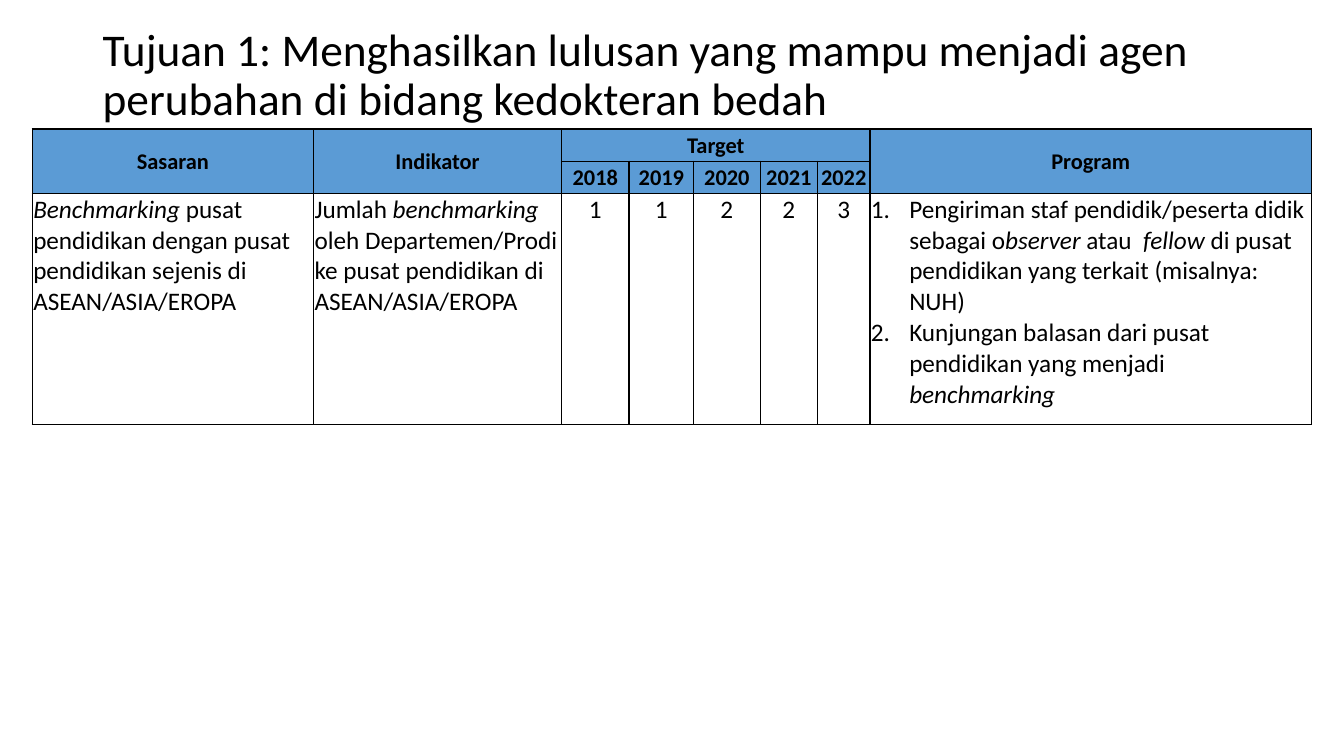
from dataclasses import dataclass

from lxml.etree import SubElement
from pptx import Presentation
from pptx.dml.color import RGBColor
from pptx.enum.text import MSO_ANCHOR, PP_ALIGN
from pptx.oxml.ns import qn
from pptx.util import Inches, Pt


@dataclass(frozen=True)
class Theme:
    """Colours, font and type sizes of the slide."""
    font: str = "Calibri"
    ink: str = "000000"
    header: str = "5B9BD5"
    title_size: float = 32.4
    header_size: float = 16
    body_size: float = 18
    border: float = 1


THEME = Theme()
TITLE = "Tujuan 1: Menghasilkan lulusan yang mampu menjadi agen perubahan di bidang kedokteran bedah"
COLUMNS = [2.79, 2.46, 0.67, 0.64, 0.66, 0.57, 0.52, 4.38]
ROWS = [0.32, 0.32, 2.29]
HEADINGS = {0: "Sasaran", 1: "Indikator", 7: "Program"}
FIRST_YEAR_COL, LAST_YEAR_COL = 2, 6
TARGETS = {"2018": "1", "2019": "1", "2020": "2", "2021": "2", "2022": "3"}
GOAL = [("Benchmarking", True),
        (" pusat pendidikan dengan pusat pendidikan sejenis di ASEAN/ASIA/EROPA", False)]
INDICATOR = [("Jumlah ", False), ("benchmarking", True),
             (" oleh Departemen/Prodi ke pusat pendidikan di ASEAN/ASIA/EROPA", False)]
PROGRAMS = [
    [("Pengiriman staf pendidik/peserta didik sebagai o", False), ("bserver ", True),
     ("atau  ", False), ("fellow ", True),
     ("di pusat pendidikan yang terkait (misalnya: NUH)", False)],
    [("Kunjungan balasan dari pusat pendidikan yang menjadi ", False), ("benchmarking", True)],
]


def add_run(p, text, size, bold=False, italic=False):
    """Add one styled run to a paragraph."""
    r = p.add_run()
    r.text = text
    r.font.name = THEME.font
    r.font.size = Pt(size)
    r.font.bold = bold
    r.font.italic = italic
    r.font.color.rgb = RGBColor.from_string(THEME.ink)


def number_paragraph(p):
    """Give a paragraph automatic numbering with a hanging indent."""
    pPr = p._p.get_or_add_pPr()
    pPr.set("marL", str(Inches(0.38)))
    pPr.set("indent", str(-Inches(0.38)))
    SubElement(pPr, qn("a:buFont"), typeface="+mj-lt")
    SubElement(pPr, qn("a:buAutoNum"), type="arabicPeriod")


def format_cell(cell, is_header):
    """Set margins, borders, anchor and fill of a cell."""
    cell.margin_left = cell.margin_right = cell.margin_top = Inches(0.01)
    cell.margin_bottom = 0
    cell.vertical_anchor = MSO_ANCHOR.MIDDLE if is_header else MSO_ANCHOR.TOP
    tcPr = cell._tc.get_or_add_tcPr()
    for side in ("lnL", "lnR", "lnT", "lnB"):
        ln = SubElement(tcPr, qn(f"a:{side}"), w=str(Pt(THEME.border)))
        SubElement(SubElement(ln, qn("a:solidFill")), qn("a:srgbClr"), val=THEME.ink)
    if is_header:
        cell.fill.solid()
        cell.fill.fore_color.rgb = RGBColor.from_string(THEME.header)
    else:
        cell.fill.background()


def write_header(cell, text):
    """Write a centred bold heading."""
    p = cell.text_frame.paragraphs[0]
    p.alignment = PP_ALIGN.CENTER
    add_run(p, text, THEME.header_size, bold=True)


def write_body(cell, paragraphs, centred=False, numbered=False):
    """Write paragraphs of (text, italic) runs."""
    tf = cell.text_frame
    for i, runs in enumerate(paragraphs):
        p = tf.add_paragraph() if i else tf.paragraphs[0]
        p.alignment = PP_ALIGN.CENTER if centred else PP_ALIGN.LEFT
        if numbered:
            number_paragraph(p)
        for text, italic in runs:
            add_run(p, text, THEME.body_size, italic=italic)


def add_title(s, left, top, width, height):
    """Place the slide title in its box."""
    tf = s.shapes.add_textbox(left, top, width, height).text_frame
    tf.word_wrap = True
    tf.vertical_anchor = MSO_ANCHOR.MIDDLE
    p = tf.paragraphs[0]
    p.line_spacing = 0.9
    add_run(p, TITLE, THEME.title_size)


def add_target_table(s, left, top, width, height):
    """Place the table of goals, yearly targets and programs."""
    frame = s.shapes.add_table(len(ROWS), len(COLUMNS), left, top, width, height)
    table = frame.table
    table.first_row = table.horz_banding = False
    for column, share in zip(table.columns, COLUMNS):
        column.width = int(width * share / sum(COLUMNS))
    for row, share in zip(table.rows, ROWS):
        row.height = int(height * share / sum(ROWS))
    for i in range(len(ROWS)):
        for j in range(len(COLUMNS)):
            format_cell(table.cell(i, j), is_header=i < 2)

    for j, heading in HEADINGS.items():
        table.cell(0, j).merge(table.cell(1, j))
        write_header(table.cell(0, j), heading)
    table.cell(0, FIRST_YEAR_COL).merge(table.cell(0, LAST_YEAR_COL))
    write_header(table.cell(0, FIRST_YEAR_COL), "Target")
    for j, (year, target) in enumerate(TARGETS.items(), FIRST_YEAR_COL):
        write_header(table.cell(1, j), year)
        write_body(table.cell(2, j), [[(target, False)]], centred=True)

    write_body(table.cell(2, 0), [GOAL])
    write_body(table.cell(2, 1), [INDICATOR])
    write_body(table.cell(2, 7), PROGRAMS, numbered=True)


def main():
    """Build and save the slide."""
    prs = Presentation()
    prs.slide_width, prs.slide_height = Inches(13.33), Inches(7.5)
    s = prs.slides.add_slide(prs.slide_layouts[6])
    add_title(s, Inches(0.92), Inches(0.4), Inches(11.5), Inches(0.71))
    add_target_table(s, Inches(0.32), Inches(1.28), Inches(12.69), Inches(2.93))
    prs.save("out.pptx")


if __name__ == "__main__":
    main()
